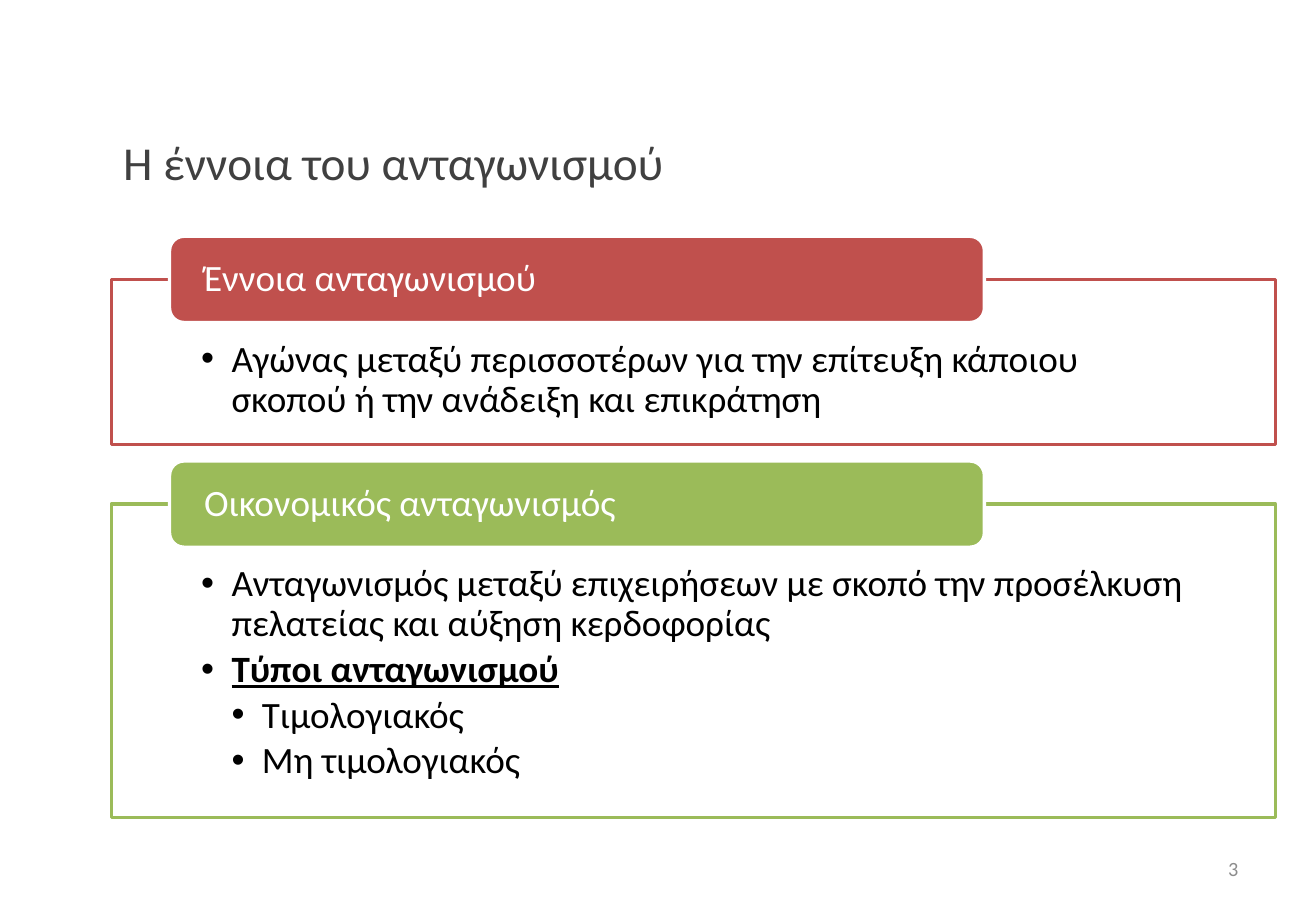
from dataclasses import dataclass

from lxml import etree
from pptx import Presentation
from pptx.dml.color import RGBColor
from pptx.enum.shapes import MSO_SHAPE
from pptx.enum.text import MSO_ANCHOR, PP_ALIGN
from pptx.oxml.ns import qn
from pptx.util import Pt

RECTANGLE, ROUNDED = MSO_SHAPE.RECTANGLE, MSO_SHAPE.ROUNDED_RECTANGLE
TOP, MIDDLE = MSO_ANCHOR.TOP, MSO_ANCHOR.MIDDLE
LEFT, RIGHT = PP_ALIGN.LEFT, PP_ALIGN.RIGHT


@dataclass(frozen=True)
class Theme:
    font: str = "Calibri"
    title: RGBColor = RGBColor(0x40, 0x40, 0x40)
    text: RGBColor = RGBColor(0, 0, 0)
    white: RGBColor = RGBColor(0xFF, 0xFF, 0xFF)
    number: RGBColor = RGBColor(0x8C, 0x8C, 0x8C)
    red: RGBColor = RGBColor(0xC0, 0x50, 0x4D)
    green: RGBColor = RGBColor(0x9B, 0xBB, 0x59)
    title_size: float = 28
    body_size: float = 22
    number_size: float = 12


THEME = Theme()

PANEL_LEFT, PANEL_WIDTH = 66, 690
FIRST_PANEL_TOP, PANEL_GAP = 165.6, 35.3
TAB_OFFSET, TAB_WIDTH, TAB_HEIGHT = 34.5, 483, 51.1
INDENT = 18

# Heading, colour, panel height, and items of (text, level, emphasised)
SECTIONS = [
    ("Έννοια ανταγωνισμού", THEME.red, 97.9, [
        ("Αγώνας μεταξύ περισσοτέρων για την επίτευξη κάποιου σκοπού "
         "ή την ανάδειξη και επικράτηση", 1, False),
    ]),
    ("Οικονομικός ανταγωνισμός", THEME.green, 185.8, [
        ("Ανταγωνισμός μεταξύ επιχειρήσεων με σκοπό την προσέλκυση "
         "πελατείας και αύξηση κερδοφορίας", 1, False),
        ("Τύποι ανταγωνισμού", 1, True),
        ("Τιμολογιακός", 2, False),
        ("Μη τιμολογιακός", 2, False),
    ]),
]


def apply_format(target, values):
    for name, value in values.items():
        setattr(target, name, value)


def set_frame(shape, anchor, margins):
    left, top, right, bottom = map(Pt, margins)
    apply_format(shape.text_frame, {
        "word_wrap": True, "vertical_anchor": anchor,
        "margin_left": left, "margin_top": top,
        "margin_right": right, "margin_bottom": bottom,
    })


def write(paragraph, text, size, color, alignment=LEFT, emphasised=None):
    paragraph.alignment = alignment
    run = paragraph.add_run()
    run.text = text
    apply_format(run.font, {
        "name": THEME.font, "size": Pt(size),
        "bold": emphasised, "underline": emphasised,
    })
    run.font.color.rgb = color


def add_bullet(paragraph, level):
    properties = paragraph._p.get_or_add_pPr()
    properties.set("marL", str(Pt(INDENT * level)))
    properties.set("indent", str(-Pt(INDENT)))
    etree.SubElement(properties, qn("a:buFont")).set("typeface", "Arial")
    etree.SubElement(properties, qn("a:buChar")).set("char", "•")


def add_label(slide, box, text, size, color, alignment=LEFT):
    shape = slide.shapes.add_textbox(*map(Pt, box))
    set_frame(shape, MIDDLE, (7.2, 3.6, 7.2, 3.6))
    write(shape.text_frame.paragraphs[0], text, size, color, alignment)


def add_block(slide, kind, box, fill, line):
    shape = slide.shapes.add_shape(kind, *map(Pt, box))
    shape.shadow.inherit = False
    shape.fill.solid()
    shape.fill.fore_color.rgb = fill
    shape.line.color.rgb = line
    shape.line.width = Pt(2)
    return shape


def add_section(slide, box, heading, color, items):
    """Draw a framed panel of bullets with a heading tab centred on its top edge."""
    left, top, _, _ = box
    panel = add_block(slide, RECTANGLE, box, THEME.white, color)
    set_frame(panel, TOP, (53.3, 36, 53.3, 12))
    frame = panel.text_frame
    for index, (text, level, emphasised) in enumerate(items):
        paragraph = frame.add_paragraph() if index else frame.paragraphs[0]
        add_bullet(paragraph, level)
        apply_format(paragraph, {"line_spacing": 0.9, "space_after": Pt(3.3)})
        write(paragraph, text, THEME.body_size, THEME.text, emphasised=emphasised)

    tab_box = (left + TAB_OFFSET, top - TAB_HEIGHT / 2, TAB_WIDTH, TAB_HEIGHT)
    tab = add_block(slide, ROUNDED, tab_box, color, THEME.white)
    set_frame(tab, MIDDLE, (18, 0, 18, 0))
    paragraph = tab.text_frame.paragraphs[0]
    paragraph.line_spacing = 0.9
    write(paragraph, heading, THEME.body_size, THEME.white)


def main():
    presentation = Presentation()
    presentation.slide_width, presentation.slide_height = Pt(780), Pt(540)
    slide = presentation.slides.add_slide(presentation.slide_layouts[6])

    add_label(slide, (PANEL_LEFT, 61.2, PANEL_WIDTH, 69),
              "Η έννοια του ανταγωνισμού", THEME.title_size, THEME.title)
    top = FIRST_PANEL_TOP
    for heading, color, height, items in SECTIONS:
        add_section(slide, (PANEL_LEFT, top, PANEL_WIDTH, height), heading, color, items)
        top += height + PANEL_GAP
    add_label(slide, (559, 500.5, 182, 28.75), "3",
              THEME.number_size, THEME.number, RIGHT)

    presentation.save("out.pptx")


if __name__ == "__main__":
    main()
